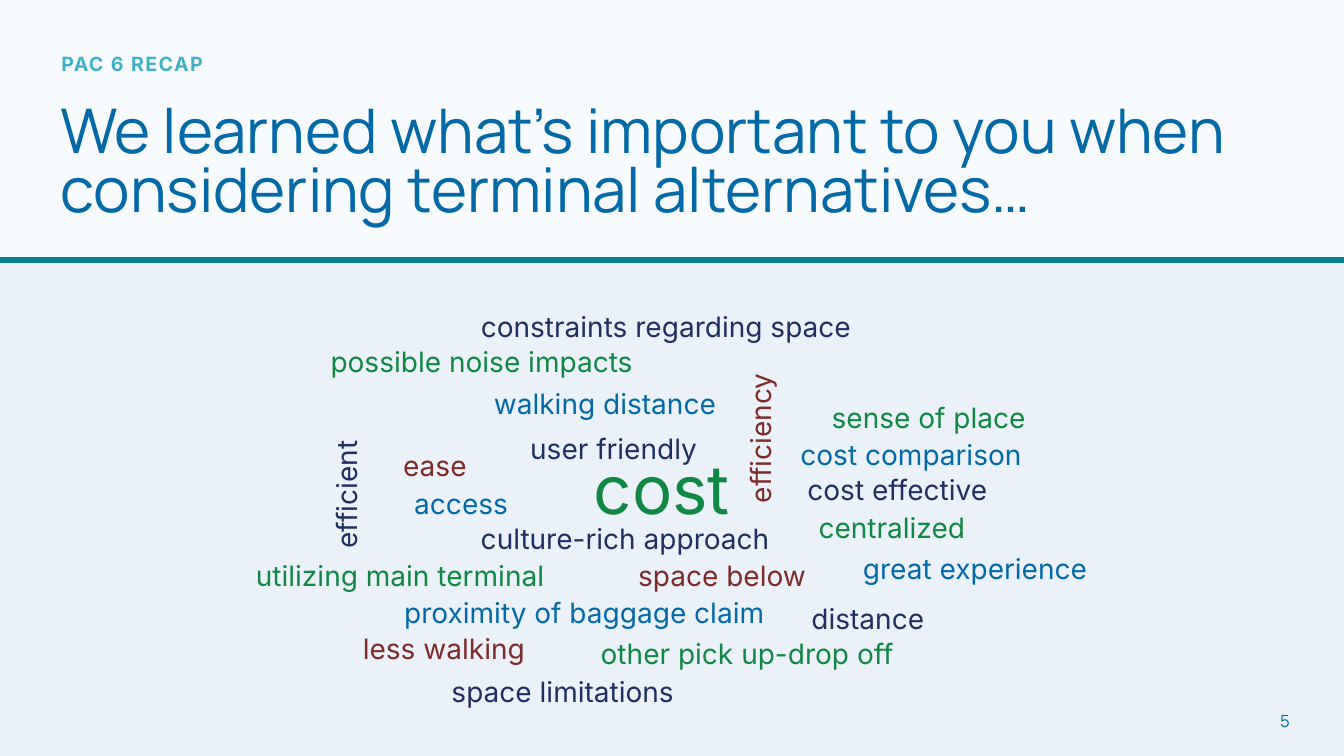
"""Build the word cloud slide about what matters in terminal alternatives."""
from dataclasses import dataclass

from lxml import etree
from pptx import Presentation
from pptx.dml.color import RGBColor
from pptx.enum.shapes import MSO_CONNECTOR, MSO_SHAPE
from pptx.enum.text import MSO_ANCHOR, MSO_AUTO_SIZE, PP_ALIGN
from pptx.oxml.ns import qn
from pptx.util import Inches, Pt

WIDTH, HEIGHT, HEADER_HEIGHT = 13.33, 7.5, 2.58
NAVY, GREEN, BLUE, MAROON = "202E61", "0F8843", "006AA8", "7E2A28"
TEAL, AQUA, WHITE, PALE = "02828C", "3DB1C7", "FEFFFF", "EAF1F9"


@dataclass(frozen=True)
class Word:
    text: str
    left: float
    top: float
    width: float
    color: str
    height: float = 0.44
    size: float = 20
    rotation: float = 0


WORDS = [
    Word("constraints regarding space", 4.67, 3.02, 3.92, NAVY),
    Word("possible noise impacts", 3.18, 3.37, 3.23, GREEN),
    Word("walking distance", 4.8, 3.79, 2.45, BLUE),
    Word("efficiency", 6.77, 4.09, 1.56, MAROON, rotation=270),
    Word("user friendly", 5.16, 4.23, 3.92, NAVY),
    Word("cost", 5.79, 4.39, 2.04, GREEN, height=0.91, size=48),
    Word("ease", 3.9, 4.4, 1.14, MAROON),
    Word("space below", 6.23, 5.49, 2.19, MAROON),
    Word("less walking", 3.5, 6.22, 2.19, MAROON),
    Word("utilizing main terminal", 2.44, 5.49, 3.23, GREEN),
    Word("other pick up-drop off", 5.86, 6.27, 3.23, GREEN),
    Word("sense of place", 8.15, 3.92, 3.23, GREEN),
    Word("centralized", 8.02, 5.02, 3.23, GREEN),
    Word("cost comparison", 7.84, 4.29, 2.45, BLUE),
    Word("access", 4.01, 4.78, 2.45, BLUE),
    Word("proximity of baggage claim", 3.91, 5.86, 3.79, BLUE),
    Word("great experience", 8.46, 5.42, 2.56, BLUE),
    Word("efficient", 2.71, 4.59, 1.46, NAVY, rotation=270),
    Word("culture-rich approach", 4.67, 5.12, 3.46, NAVY),
    Word("space limitations", 4.38, 6.64, 3.46, NAVY),
    Word("distance", 7.95, 5.92, 3.46, NAVY),
    Word("cost effective", 7.91, 4.64, 3.46, NAVY),
]


def rgb(color: str) -> RGBColor:
    return RGBColor.from_string(color)


def write(shape, text: str, size: float, color: str, family: str = "Inter"):
    frame = shape.text_frame
    frame.text = text
    frame.word_wrap = True
    frame.vertical_anchor = MSO_ANCHOR.TOP
    paragraph = frame.paragraphs[0]
    paragraph.alignment = PP_ALIGN.LEFT
    font = paragraph.runs[0].font
    font.name, font.size = family, Pt(size)
    font.color.rgb = rgb(color)
    return paragraph


def add_text_box(slide, left: float, top: float, width: float, height: float):
    return slide.shapes.add_textbox(*map(Inches, (left, top, width, height)))


def add_panel(slide, height: float, color: str, opacity: int = 100) -> None:
    panel = slide.shapes.add_shape(MSO_SHAPE.RECTANGLE, 0, 0, Inches(WIDTH), Inches(height))
    panel.shadow.inherit = False
    panel.line.fill.background()
    panel.fill.solid()
    panel.fill.fore_color.rgb = rgb(color)
    if opacity < 100:
        fill_color = panel._element.spPr.find(qn("a:solidFill"))[0]
        etree.SubElement(fill_color, qn("a:alpha"), val=str(opacity * 1000))


def add_divider(slide) -> None:
    divider = slide.shapes.add_connector(
        MSO_CONNECTOR.STRAIGHT, 0, Inches(HEADER_HEIGHT), Inches(WIDTH), Inches(HEADER_HEIGHT))
    divider.line.color.rgb = rgb(TEAL)
    divider.line.width = Pt(4.5)
    etree.SubElement(divider._element.spPr, qn("a:effectLst"))


def add_word(slide, word: Word) -> None:
    box = add_text_box(slide, word.left, word.top, word.width, word.height)
    write(box, word.text, word.size, word.color)
    box.text_frame.auto_size = MSO_AUTO_SIZE.SHAPE_TO_FIT_TEXT
    box.rotation = word.rotation


def add_kicker(slide) -> None:
    kicker = add_text_box(slide, 0.51, 0.49, 6.5, 0.77)
    paragraph = write(kicker, "PAC 6 RECAP", 14, AQUA)
    paragraph.line_spacing = 0.9
    paragraph.runs[0].font.bold = True
    paragraph.runs[0].font._element.set("spc", "100")


def add_page_number(slide) -> None:
    page_number = add_text_box(slide, 9.42, 6.95, 3.47, 0.4)
    write(page_number, "5", 12, BLUE, "Manrope").alignment = PP_ALIGN.RIGHT
    page_number.text_frame.vertical_anchor = MSO_ANCHOR.MIDDLE


def place_title(slide) -> None:
    title = slide.shapes.title
    title.left, title.top, title.width, title.height = map(Inches, (0.5, 1, 12.67, 1.42))
    headline = "We learned what’s important to you when considering terminal alternatives…"
    write(title, headline, 44, BLUE, "Manrope").line_spacing = 0.8
    title.text_frame.auto_size = MSO_AUTO_SIZE.NONE
    slide.shapes._spTree.append(title._element)


def main() -> None:
    deck = Presentation()
    deck.slide_width, deck.slide_height = Inches(WIDTH), Inches(HEIGHT)
    slide = deck.slides.add_slide(deck.slide_layouts[5])
    slide.background.fill.solid()
    slide.background.fill.fore_color.rgb = rgb(WHITE)
    add_panel(slide, HEIGHT, PALE)
    add_panel(slide, HEADER_HEIGHT, WHITE, opacity=75)
    add_page_number(slide)
    add_kicker(slide)
    add_divider(slide)
    for word in WORDS:
        add_word(slide, word)
    place_title(slide)
    deck.save("out.pptx")


if __name__ == "__main__":
    main()
